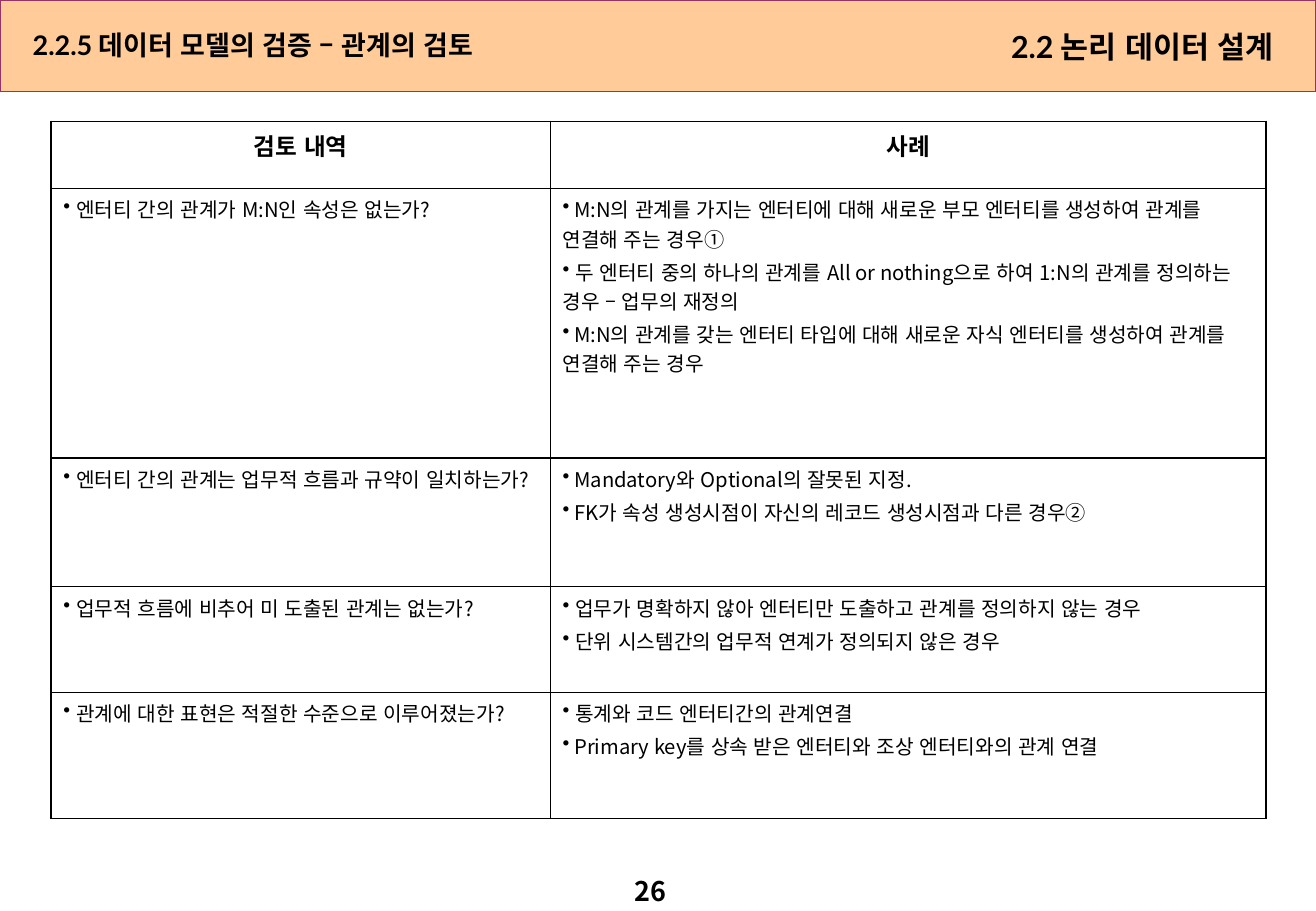
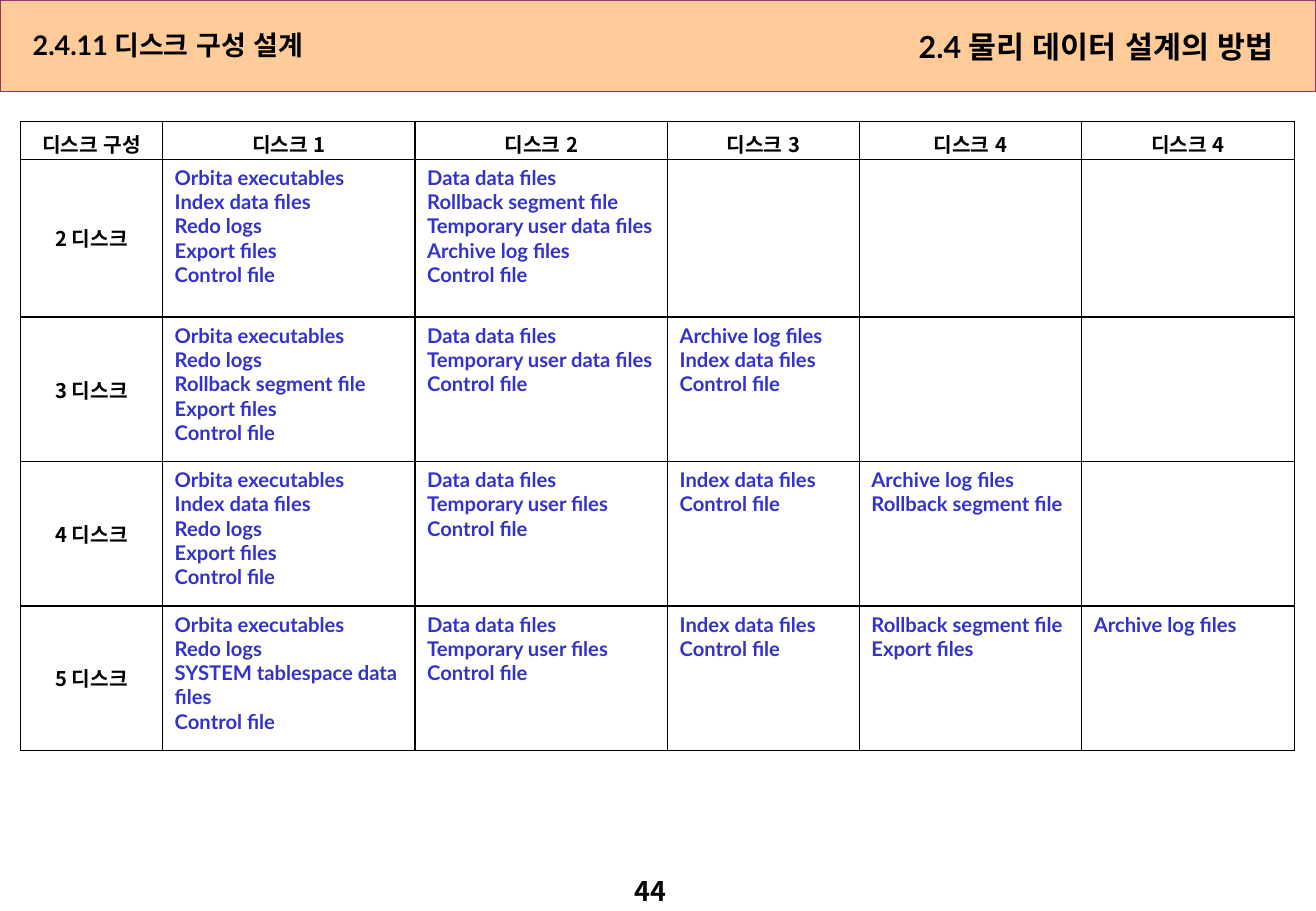
from lxml import etree
from pptx import Presentation
from pptx import util as u
from pptx.dml.color import RGBColor
from pptx.enum import lang, shapes, text
from pptx.oxml.ns import qn

SANS, LATIN = "Noto Sans CJK KR", "Lato"
BLACK, BLUE, PEACH, PLUM = "000000", "3333CC", "FFCC99", "993366"
LEFT, MID, RIGHT = text.PP_ALIGN.LEFT, text.PP_ALIGN.CENTER, text.PP_ALIGN.RIGHT
WIDE, HIGH, BAND = 27.52, 19.05, 1.91


def paint(color, code):
    color.rgb = RGBColor.from_string(code)


def box(*sides):
    return [u.Cm(side) for side in sides]


def style(para, size, face=SANS, bold=True, color=BLACK, align=LEFT):
    para.alignment = align
    for run in para.runs:
        font = run.font
        font.size, font.name, font.bold = u.Pt(size), face, bold
        font.language_id = lang.MSO_LANGUAGE_ID.KOREAN
        paint(font.color, color)
        etree.SubElement(font._element, qn("a:ea"), typeface=SANS)


def label(shape, words, size, wrap=True, **look):
    frame = shape.text_frame
    frame.text = words
    frame.word_wrap = wrap
    frame.auto_size = text.MSO_AUTO_SIZE.NONE
    frame.vertical_anchor = text.MSO_ANCHOR.TOP
    style(frame.paragraphs[0], size, **look)


# Band, title, section name and page number
def page(deck, title, part, number):
    slide = deck.slides.add_slide(deck.slide_layouts[5])
    items = slide.shapes
    band = items.add_shape(shapes.MSO_SHAPE.RECTANGLE, *box(0, 0, WIDE, BAND))
    band.shadow.inherit = False
    band.fill.solid()
    paint(band.fill.fore_color, PEACH)
    paint(band.line.color, PLUM)
    band.line.width = u.Pt(0.75)
    items.title._element.addprevious(band._element)

    head = items.title
    head.left, head.top, head.width, head.height = box(0.43, 0.46, 13.13, 0.94)
    label(head, title, 16, face=LATIN)
    label(items.add_textbox(*box(14.81, 0.46, 12.07, 1.02)), part, 18,
          face=LATIN, align=RIGHT)
    label(items.add_textbox(*box(13.03, 18.16, 1.32, 0.94)), number, 16, wrap=False)
    return slide


def border(cell):
    props = cell._tc.get_or_add_tcPr()
    for spot, side in enumerate(("lnL", "lnR", "lnT", "lnB")):
        line = etree.Element(qn("a:" + side), w=str(u.Pt(1)))
        fill = etree.SubElement(line, qn("a:solidFill"))
        etree.SubElement(fill, qn("a:srgbClr"), val=BLACK)
        props.insert(spot, line)


def bullet(para):
    props = para._p.get_or_add_pPr()
    props.set("marL", "0")
    props.set("indent", "0")
    etree.SubElement(props, qn("a:buChar"), char="•")


# Ruled table; look(row, col) gives the text style, anchor and bullets of a cell
def grid(slide, left, top, cols, rows, data, look):
    place = box(left, top, sum(cols), sum(rows))
    table = slide.shapes.add_table(len(rows), len(cols), *place).table
    table.first_row = table.horz_banding = False
    for col, width in zip(table.columns, cols):
        col.width = u.Cm(width)
    for row, height in zip(table.rows, rows):
        row.height = u.Cm(height)
    for r, line in enumerate(data):
        for c, words in enumerate(line):
            cell = table.cell(r, c)
            cell.fill.background()
            border(cell)
            font, anchor, dots = look(r, c)
            cell.vertical_anchor = anchor
            if r == 0:
                cell.margin_bottom = 0
            cell.text_frame.text = words
            for n, para in enumerate(cell.text_frame.paragraphs):
                if dots:
                    bullet(para)
                    if n:
                        para.space_before = u.Pt(2)
                style(para, **font)


# Review items beside their example cases
def review(deck):
    slide = page(deck, "2.2.5 데이터 모델의 검증 – 관계의 검토", "2.2 논리 데이터 설계", "26")
    data = [
        ("검토 내역", "사례"),
        (" 엔터티 간의 관계가 M:N인 속성은 없는가?",
         " M:N의 관계를 가지는 엔터티에 대해 새로운 부모 엔터티를 생성하여 관계를 연결해 주는 경우①\n"
         " 두 엔터티 중의 하나의 관계를 All or nothing으로 하여 1:N의 관계를 정의하는 경우 – 업무의 재정의\n"
         " M:N의 관계를 갖는 엔터티 타입에 대해 새로운 자식 엔터티를 생성하여 관계를 연결해 주는 경우"),
        (" 엔터티 간의 관계는 업무적 흐름과 규약이 일치하는가?",
         " Mandatory와 Optional의 잘못된 지정.\n"
         " FK가 속성 생성시점이 자신의 레코드 생성시점과 다른 경우②"),
        (" 업무적 흐름에 비추어 미 도출된 관계는 없는가?",
         " 업무가 명확하지 않아 엔터티만 도출하고 관계를 정의하지 않는 경우\n"
         " 단위 시스템간의 업무적 연계가 정의되지 않은 경우"),
        (" 관계에 대한 표현은 적절한 수준으로 이루어졌는가?",
         " 통계와 코드 엔터티간의 관계연결\n"
         " Primary key를 상속 받은 엔터티와 조상 엔터티와의 관계 연결"),
    ]

    def look(r, c):
        font = dict(size=12, bold=False) if r else dict(size=14, align=MID)
        return font, text.MSO_ANCHOR.TOP, r > 0

    grid(slide, 1.07, 2.54, [10.44, 14.96], [1.4, 5.64, 2.69, 2.21, 2.64], data, look)


# Files kept on each disk, by number of disks
def disks(deck):
    slide = page(deck, "2.4.11 디스크 구성 설계", "2.4 물리 데이터 설계의 방법", "44")
    data = [
        ("디스크 구성", "디스크 1", "디스크 2", "디스크 3", "디스크 4", "디스크 4"),
        ("2 디스크",
         "Orbita executables\nIndex data files\nRedo logs\nExport files\nControl file",
         "Data data files\nRollback segment file\nTemporary user data files\n"
         "Archive log files\nControl file", "", "", ""),
        ("3 디스크",
         "Orbita executables\nRedo logs\nRollback segment file\nExport files\nControl file",
         "Data data files\nTemporary user data files\nControl file",
         "Archive log files\nIndex data files\nControl file", "", ""),
        ("4 디스크",
         "Orbita executables\nIndex data files\nRedo logs\nExport files\nControl file",
         "Data data files\nTemporary user files\nControl file",
         "Index data files\nControl file",
         "Archive log files\nRollback segment file", ""),
        ("5 디스크",
         "Orbita executables\nRedo logs\nSYSTEM tablespace data files\nControl file",
         "Data data files\nTemporary user files\nControl file",
         "Index data files\nControl file",
         "Rollback segment file\nExport files", "Archive log files"),
    ]

    def look(r, c):
        if r and c:
            return dict(size=12, face=LATIN, color=BLUE), text.MSO_ANCHOR.TOP, False
        return dict(size=12, align=MID), text.MSO_ANCHOR.MIDDLE, False

    grid(slide, 0.43, 2.54, [2.97, 5.28, 5.28, 4.01, 4.65, 4.45],
         [0.79, 3.3] + [3.02] * 3, data, look)


def main():
    deck = Presentation()
    deck.slide_width, deck.slide_height = box(WIDE, HIGH)
    review(deck)
    disks(deck)
    deck.save("out.pptx")


if __name__ == "__main__":
    main()
